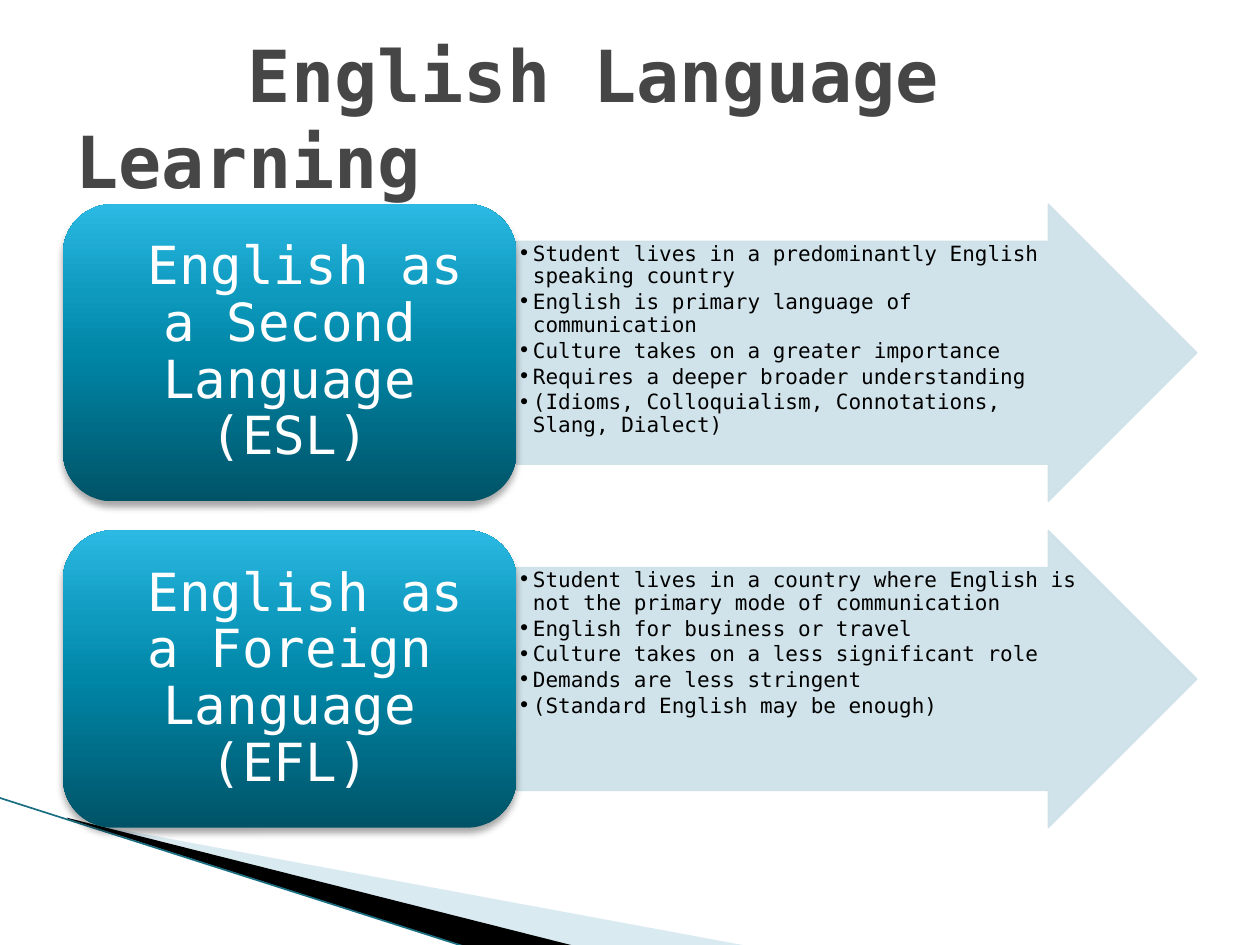
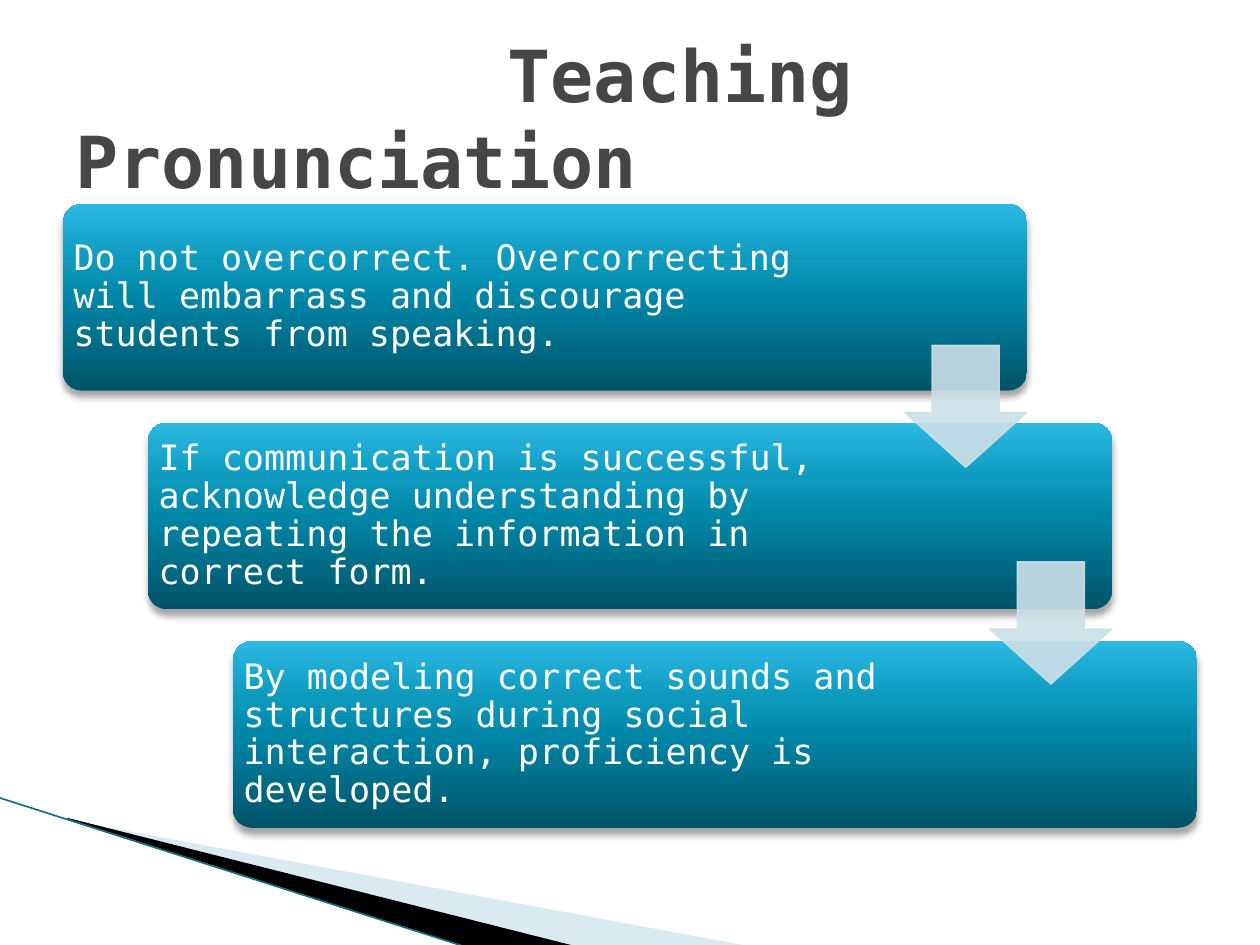
from lxml import etree
from pptx import Presentation
from pptx.dml.color import RGBColor
from pptx.enum.shapes import MSO_CONNECTOR, MSO_SHAPE
from pptx.enum.text import MSO_ANCHOR, PP_ALIGN
from pptx.oxml.ns import qn
from pptx.util import Inches, Pt

FONT = "DejaVu Sans Mono"
WHITE = RGBColor(0xFF, 0xFF, 0xFF)
BLACK = RGBColor(0x00, 0x00, 0x00)
TITLE_GRAY = RGBColor(0x46, 0x46, 0x46)
PALE_BLUE = RGBColor(0xCD, 0xE0, 0xE8)
WEDGE_BLUE = RGBColor(0xA0, 0xCB, 0xDC)
EDGE_TEAL = RGBColor(0x1A, 0x6E, 0x82)
# Panel gradient, from bottom to top
PANEL_STOPS = [
    (0, RGBColor(0x00, 0x53, 0x67)),
    (50, RGBColor(0x00, 0x86, 0xA7)),
    (70, RGBColor(0x0E, 0x9A, 0xBE)),
    (100, RGBColor(0x2C, 0xB9, 0xE3)),
]
ROUNDED, RIGHT_ARROW, DOWN_ARROW = (
    MSO_SHAPE.ROUNDED_RECTANGLE, MSO_SHAPE.RIGHT_ARROW, MSO_SHAPE.DOWN_ARROW)
STRAIGHT = MSO_CONNECTOR.STRAIGHT
TOP, MIDDLE = MSO_ANCHOR.TOP, MSO_ANCHOR.MIDDLE
LEFT, CENTER = PP_ALIGN.LEFT, PP_ALIGN.CENTER


def write(shape, lines, size, color, bold=False, align=LEFT, anchor=MIDDLE,
          insets=(0.1, 0.05, 0.1, 0.05), spacing=0.9, first_indent=0, bullet_indent=0):
    """Fill a shape with paragraphs; insets run left, top, right, bottom."""
    frame = shape.text_frame
    frame.word_wrap = True
    frame.vertical_anchor = anchor
    (frame.margin_left, frame.margin_top,
     frame.margin_right, frame.margin_bottom) = map(Inches, insets)
    for index, line in enumerate(lines):
        para = frame.add_paragraph() if index else frame.paragraphs[0]
        para.alignment = align
        para.line_spacing = spacing
        properties = para._p.get_or_add_pPr()
        properties.set("marL", str(Inches(bullet_indent)))
        properties.set("indent", str(Inches(first_indent - bullet_indent)))
        if bullet_indent:
            para.space_after = Pt(1.8)
            etree.SubElement(properties, qn("a:buFont")).set("typeface", FONT)
            etree.SubElement(properties, qn("a:buChar")).set("char", "•")
        span = para.add_run()
        span.text = line
        span.font.name, span.font.size = FONT, Pt(size)
        span.font.bold, span.font.color.rgb = bold, color


def add_block(page, kind, place, adjustments=(), color=None):
    """Add a pale arrow when a color is given, else a shaded panel with shadow."""
    block = page.shapes.add_shape(kind, *map(Inches, place))
    block.shadow.inherit = False
    for index, value in enumerate(adjustments):
        block.adjustments[index] = value
    if color is not None:
        block.fill.solid()
        block.fill.fore_color.rgb = color
        block.line.color.rgb = color
        block.line.width = Pt(0.75)
        for node in block._element.spPr.iter(qn("a:srgbClr")):
            etree.SubElement(node, qn("a:alpha")).set("val", "90000")
        return block
    block.line.fill.background()
    block.fill.gradient()
    block.fill.gradient_angle = 90
    stops = block._element.spPr.find(".//" + qn("a:gsLst"))
    for stop in list(stops):
        stops.remove(stop)
    for position, shade in PANEL_STOPS:
        stop = etree.SubElement(stops, qn("a:gs"), pos=str(position * 1000))
        etree.SubElement(stop, qn("a:srgbClr"), val=str(shade))
    effects = block._element.spPr.find(qn("a:effectLst"))
    shadow = etree.SubElement(effects, qn("a:outerShdw"), blurRad=str(Pt(4)),
                              dist=str(Pt(3)), dir="5400000", rotWithShape="0")
    tint = etree.SubElement(shadow, qn("a:srgbClr"), val=str(BLACK))
    etree.SubElement(tint, qn("a:alpha"), val="35000")
    return block


deck = Presentation()
deck.slide_width, deck.slide_height = Inches(10), Inches(7.5)
pages = []

# Shared corner wedges and titles; the first title line is indented
WEDGES = [
    ([(0.55, 6.51), (5.95, 7.51), (4.56, 7.51), (0.55, 6.5)], WEDGE_BLUE, 40),
    ([(0.53, 6.49), (4.57, 7.51), (3.72, 7.52), (0.54, 6.5)], BLACK, 100),
]
for title, indent in [("English Language Learning", 1.37),
                      ("Teaching Pronunciation", 3.43)]:
    page = deck.slides.add_slide(deck.slide_layouts[6])
    pages.append(page)
    for points, color, opacity in WEDGES:
        corners = [(Inches(x), Inches(y)) for x, y in points]
        builder = page.shapes.build_freeform(*corners[0])
        builder.add_line_segments(corners[1:], close=True)
        wedge = builder.convert_to_shape()
        wedge.shadow.inherit = False
        wedge.fill.solid()
        wedge.fill.fore_color.rgb = color
        wedge.line.fill.background()
        tint = wedge._element.spPr.find(".//" + qn("a:srgbClr"))
        etree.SubElement(tint, qn("a:alpha"), val=str(opacity * 1000))
    edge = page.shapes.add_connector(
        STRAIGHT, Inches(-0.01), Inches(6.33), Inches(3.71), Inches(7.52))
    edge.line.color.rgb = EDGE_TEAL
    edge.line.width = Pt(0.95)
    etree.SubElement(edge._element.spPr, qn("a:effectLst"))
    title_box = page.shapes.add_textbox(Inches(0.5), Inches(0.3), Inches(9), Inches(1.25))
    write(title_box, [title], 41, TITLE_GRAY, bold=True, spacing=1, first_indent=indent)

learning_page, pronunciation_page = pages

# Slide 1: two kinds of learning, each with its traits on an arrow
LEARNING = [
    ("English as a Second Language (ESL)", [
        "Student lives in a predominantly English speaking country",
        "English is primary language of communication",
        "Culture takes on a greater importance",
        "Requires a deeper broader understanding",
        "(Idioms, Colloquialism, Connotations, Slang, Dialect)",
    ]),
    ("English as a Foreign Language (EFL)", [
        "Student lives in a country where English is not the primary mode of communication",
        "English for business or travel",
        "Culture takes on a less significant role",
        "Demands are less stringent",
        "(Standard English may be enough)",
    ]),
]
for row, (name, traits) in enumerate(LEARNING):
    top = 1.62 + row * 2.59
    add_block(learning_page, RIGHT_ARROW, (4.1, top, 5.4, 2.36), (0.75, 0.5), PALE_BLUE)
    traits_box = learning_page.shapes.add_textbox(
        Inches(4.1), Inches(top + 0.3), Inches(4.52), Inches(1.77))
    write(traits_box, traits, 12, BLACK, anchor=TOP, insets=(0.01, 0.01, 0.01, 0.01),
          bullet_indent=0.12)
    panel = add_block(learning_page, ROUNDED, (0.5, top, 3.6, 2.36))
    write(panel, [name], 30, WHITE, align=CENTER, insets=(0.12, 0.06, 0.12, 0.06),
          first_indent=0.25)

# Slide 2: three steps going down to the right, with their right insets
STEPS = [
    ("Do not overcorrect. Overcorrecting will embarrass and discourage "
     "students from speaking.", 1.56),
    ("If communication is successful, acknowledge understanding by repeating "
     "the information in correct form.", 1.68),
    ("By modeling correct sounds and structures during social interaction, "
     "proficiency is developed.", 1.68),
]
STEP_X, STEP_Y = (1.85 - 0.5) / 2, (5.09 - 1.62) / 2
for step, (advice, right_inset) in enumerate(STEPS):
    place = (0.5 + step * STEP_X, 1.62 + step * STEP_Y, 7.65, 1.48)
    panel = add_block(pronunciation_page, ROUNDED, place, (0.1,))
    write(panel, [advice], 20, WHITE, insets=(0.04, 0.04, right_inset, 0.04))

# Arrows between the steps
for step in range(len(STEPS) - 1):
    place = (7.18 + step * STEP_X, 2.74 + step * 1.72, 0.97, 0.97)
    add_block(pronunciation_page, DOWN_ARROW, place, (0.55, 0.45), PALE_BLUE)

deck.save("out.pptx")
